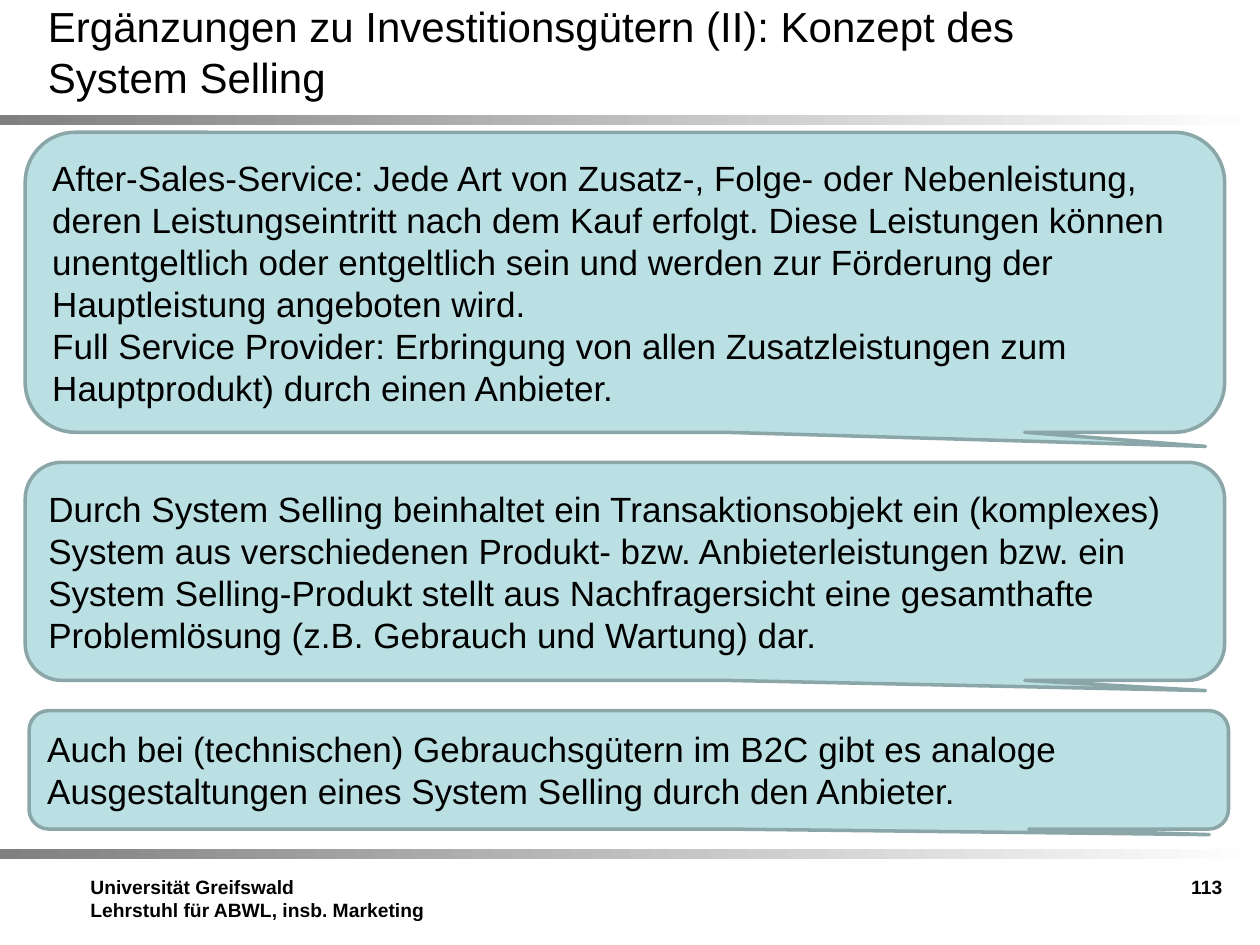
from pptx import Presentation
from pptx.dml.color import RGBColor
from pptx.enum.shapes import MSO_SHAPE as Preset
from pptx.enum.text import MSO_ANCHOR as Anchor, MSO_AUTO_SIZE as AutoSize, PP_ALIGN as Align
from pptx.util import Pt

FONT = "Arial"
BLACK = "000000"
TITLE_ONLY = 5


def color(hex_string):
    return RGBColor.from_string(hex_string)


class SlideBuilder:
    """Holds the style and the current slide; all lengths are in points."""

    callout_fill, callout_line = "BBE0E3", "8AA6A8"
    band_start, band_end = "808080", "FFFFFF"
    title_size, body_size, footer_size = 24, 20, 11

    def __init__(self, slide):
        self.slide = slide

    def add_text(self, frame, paragraphs, size, bold=False, align=Align.LEFT, anchor=Anchor.TOP):
        frame.word_wrap = True
        frame.auto_size = AutoSize.NONE
        frame.vertical_anchor = anchor
        for index, text in enumerate(paragraphs):
            paragraph = frame.paragraphs[0] if index == 0 else frame.add_paragraph()
            paragraph.alignment = align
            run = paragraph.add_run()
            run.text = text
            run.font.name = FONT
            run.font.size = Pt(size)
            run.font.bold = bold
            run.font.color.rgb = color(BLACK)

    def title(self, text, left, top, width, height):
        heading = self.slide.shapes.title
        heading.left, heading.top = Pt(left), Pt(top)
        heading.width, heading.height = Pt(width), Pt(height)
        self.add_text(heading.text_frame, [text], self.title_size, anchor=Anchor.MIDDLE)

    def band(self, top):
        band = self.slide.shapes.add_shape(Preset.RECTANGLE, 0, Pt(top), Pt(720), Pt(5.8))
        band.shadow.inherit = False
        band.line.fill.background()
        band.fill.gradient()
        band.fill.gradient_angle = 0
        for stop, shade in zip(band.fill.gradient_stops, (self.band_start, self.band_end)):
            stop.color.rgb = color(shade)

    def footer(self, lines, left, width, align=Align.LEFT):
        box = self.slide.shapes.add_textbox(Pt(left), Pt(496.8), Pt(width), Pt(42))
        self.add_text(box.text_frame, lines, self.footer_size, bold=True, align=align)

    def callout(self, paragraphs, left, top, height):
        callout = self.slide.shapes.add_shape(
            Preset.ROUNDED_RECTANGULAR_CALLOUT, Pt(left), Pt(top), Pt(685.4), Pt(height))
        callout.shadow.inherit = False
        for index, value in enumerate((0.484, 0.547, 0.167)):
            callout.adjustments[index] = value
        callout.fill.solid()
        callout.fill.fore_color.rgb = color(self.callout_fill)
        callout.line.color.rgb = color(self.callout_line)
        callout.line.width = Pt(2)
        self.add_text(callout.text_frame, paragraphs, self.body_size, anchor=Anchor.MIDDLE)


def main():
    deck = Presentation()
    deck.slide_width, deck.slide_height = Pt(720), Pt(540)
    page = SlideBuilder(deck.slides.add_slide(deck.slide_layouts[TITLE_ONLY]))

    # Frame: gradient bands, footer and page number
    for top in (65.5, 485.3):
        page.band(top)
    page.footer(["Universität Greifswald", "Lehrstuhl für ABWL, insb. Marketing"], 44.6, 209.5)
    page.footer(["113"], 537.8, 167.8, Align.RIGHT)

    # Title
    page.title("Ergänzungen zu Investitionsgütern (II): Konzept des System Selling",
               20.2, 6.5, 648, 45.4)

    # Definitions and remarks
    after_sales = [
        "After-Sales-Service: Jede Art von Zusatz-, Folge- oder Nebenleistung, deren "
        "Leistungseintritt nach dem Kauf erfolgt. Diese Leistungen können unentgeltlich oder "
        "entgeltlich sein und werden zur Förderung der Hauptleistung angeboten wird.",
        "Full Service Provider: Erbringung von allen Zusatzleistungen zum Hauptprodukt) "
        "durch einen Anbieter.",
    ]
    system_selling = [
        "Durch System Selling beinhaltet ein Transaktionsobjekt ein (komplexes) System aus "
        "verschiedenen Produkt- bzw. Anbieterleistungen bzw. ein System Selling-Produkt stellt "
        "aus Nachfragersicht eine gesamthafte Problemlösung (z.B. Gebrauch und Wartung) dar.",
    ]
    consumer_goods = [
        "Auch bei (technischen) Gebrauchsgütern im B2C gibt es analoge Ausgestaltungen eines "
        "System Selling durch den Anbieter.",
    ]
    page.callout(after_sales, 14.4, 75.6, 171.4)
    page.callout(system_selling, 14.4, 264.2, 124.6)
    page.callout(consumer_goods, 16.6, 406.1, 67.7)

    deck.save("out.pptx")


if __name__ == "__main__":
    main()
